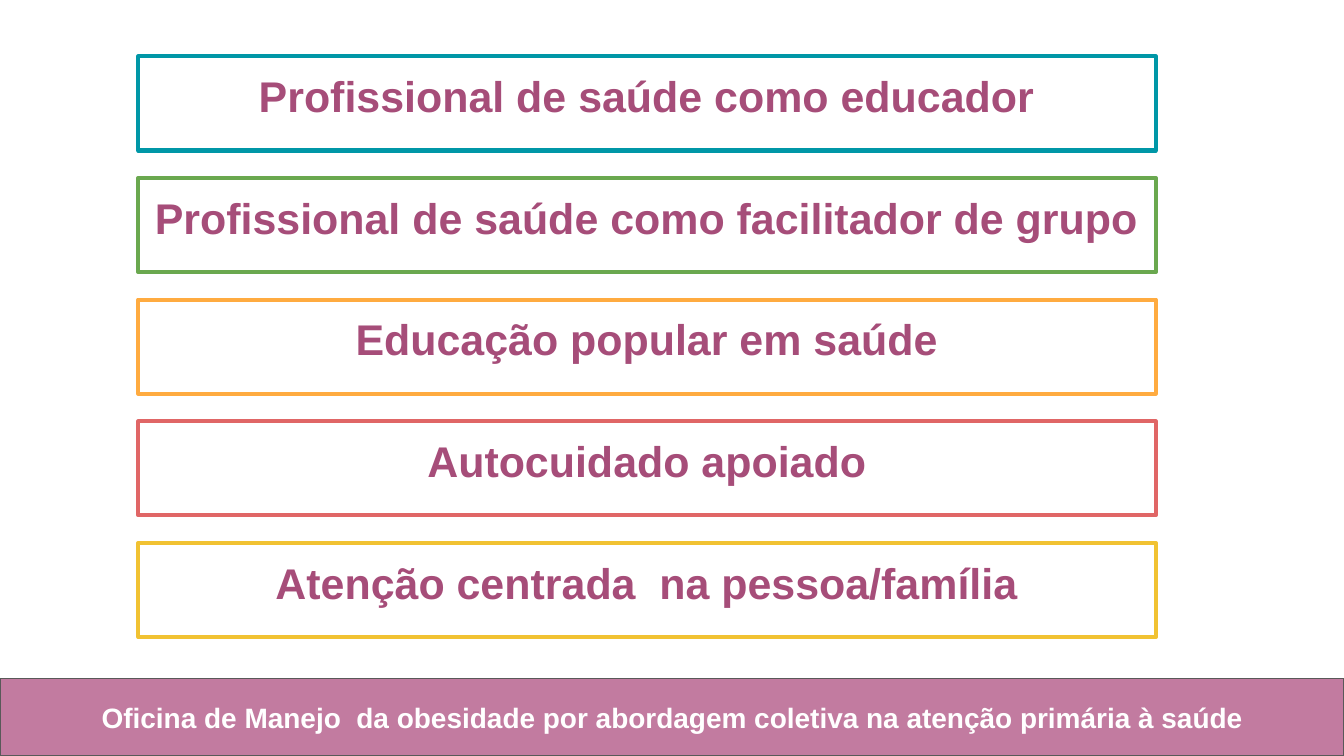
from typing import NamedTuple

from lxml import etree
from pptx import Presentation
from pptx.dml.color import RGBColor
from pptx.enum.shapes import MSO_SHAPE
from pptx.enum.text import MSO_ANCHOR, PP_ALIGN
from pptx.oxml.ns import qn
from pptx.util import Inches, Pt

RECT = MSO_SHAPE.RECTANGLE
TOP = MSO_ANCHOR.TOP
CENTER = PP_ALIGN.CENTER

FONT = "Arial"
COLORS = {
    "white": "FFFFFF",
    "pink": "C27BA0",
    "plum": "A64D79",
    "gray": "595959",
    "teal": "0097A7",
    "green": "6AA84F",
    "orange": "FFAB40",
    "red": "E06666",
    "yellow": "F1C232",
}


class Topic(NamedTuple):
    text: str
    color: str


TOPICS = [
    Topic("Profissional de saúde como educador", "teal"),
    Topic("Profissional de saúde como facilitador de grupo", "green"),
    Topic("Educação popular em saúde", "orange"),
    Topic("Autocuidado apoiado", "red"),
    Topic("Atenção centrada  na pessoa/família", "yellow"),
]
FOOTER = "Oficina de Manejo  da obesidade por abordagem coletiva na atenção primária à saúde"

WIDTH = 10
HEIGHT = WIDTH * 9 / 16
LEFT, FIRST, LAST = 1.03, 0.42, 4.04
STEP = (LAST - FIRST) / (len(TOPICS) - 1)
BOX_W, BOX_H = 7.57, 0.7
BAR_TOP = 5.05


def rgb(name: str) -> RGBColor:
    return RGBColor.from_string(COLORS[name])


def add_rect(slide, left: float, top: float, width: float, height: float, *,
             line: str, weight: float, fill: str | None = None):
    rect = slide.shapes.add_shape(
        RECT, Inches(left), Inches(top), Inches(width), Inches(height))
    rect.shadow.inherit = False
    if fill:
        rect.fill.solid()
        rect.fill.fore_color.rgb = rgb(fill)
    else:
        rect.fill.background()
    rect.line.color.rgb = rgb(line)
    rect.line.width = Pt(weight)
    edge = rect.element.spPr.find(qn("a:ln"))
    etree.SubElement(edge, qn("a:round"))
    return rect


def write(shape, text: str, *, size: float, color: str) -> None:
    """Set one bold, centred paragraph at the top of the shape."""
    frame = shape.text_frame
    frame.word_wrap = True
    frame.vertical_anchor = TOP
    frame.margin_left = frame.margin_right = Inches(0.1)
    frame.margin_top = frame.margin_bottom = Inches(0.1)
    para = frame.paragraphs[0]
    para.alignment = CENTER
    run = para.add_run()
    run.text = text
    run.font.name = FONT
    run.font.size = Pt(size)
    run.font.bold = True
    run.font.color.rgb = rgb(color)


def add_footer(slide) -> None:
    add_rect(slide, 0, BAR_TOP, WIDTH, HEIGHT - BAR_TOP,
             line="gray", weight=0.75, fill="pink")
    label = slide.shapes.add_textbox(
        Inches(0.34), Inches(5.11), Inches(9.33), Inches(0.45))
    write(label, FOOTER, size=15, color="white")


def add_topics(slide) -> None:
    for row, topic in enumerate(TOPICS):
        box = add_rect(slide, LEFT, FIRST + row * STEP, BOX_W, BOX_H,
                       line=topic.color, weight=2.25)
        write(box, topic.text, size=23, color="plum")


def main() -> None:
    deck = Presentation()
    deck.slide_width = Inches(WIDTH)
    deck.slide_height = Inches(HEIGHT)
    slide = deck.slides.add_slide(deck.slide_layouts[6])
    add_footer(slide)
    add_topics(slide)
    deck.save("out.pptx")


if __name__ == "__main__":
    main()
